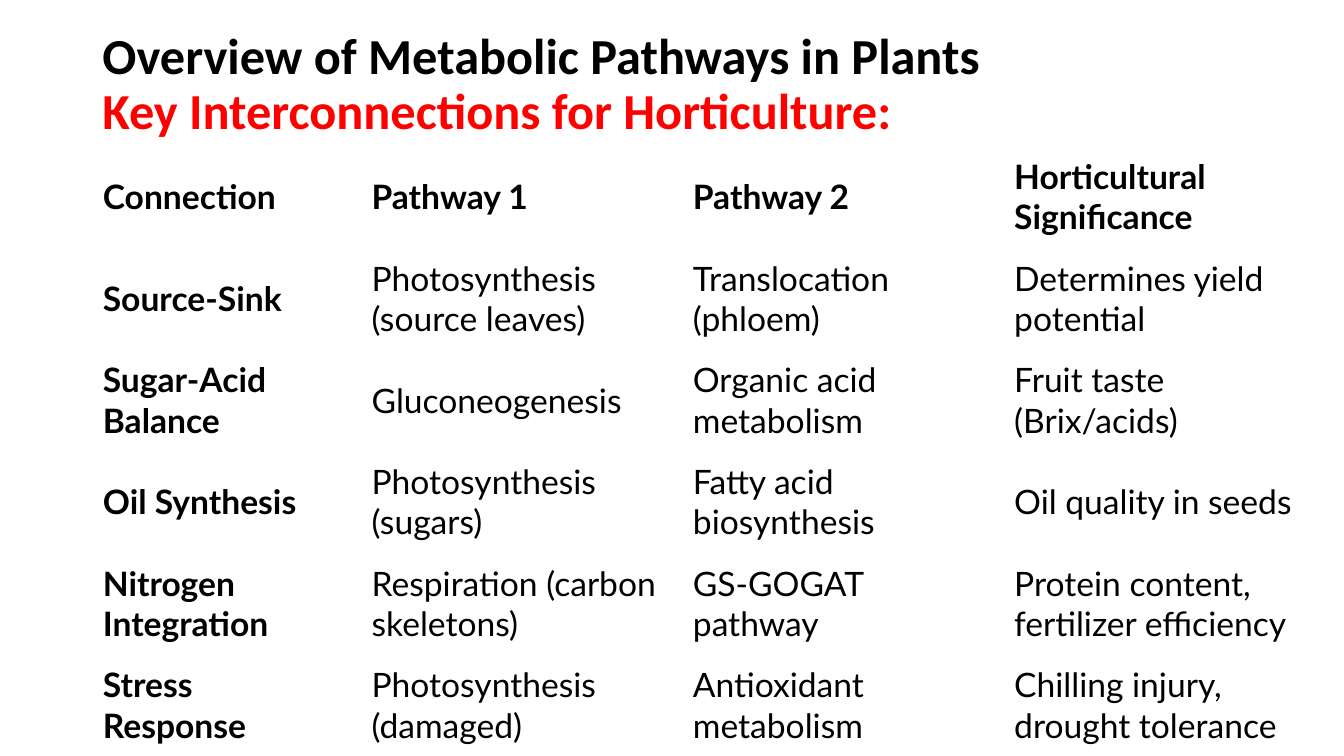
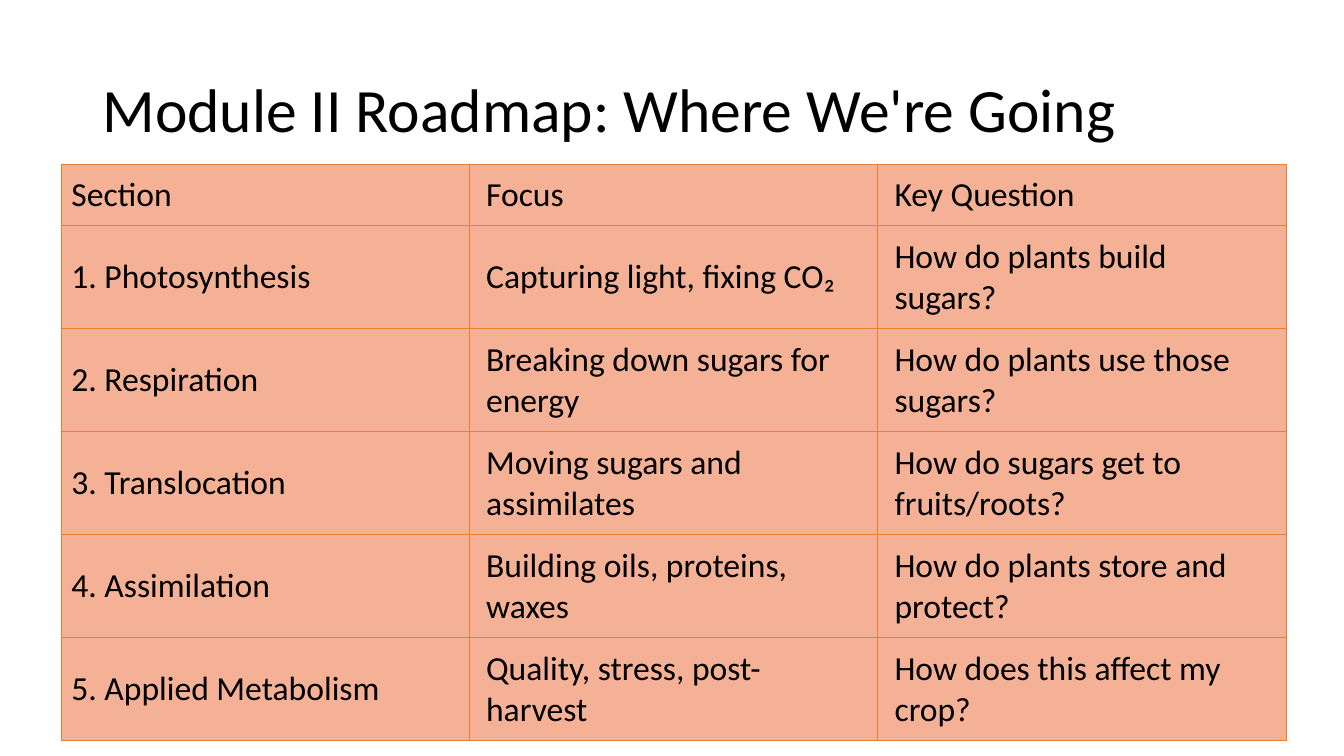
from dataclasses import dataclass
from typing import Optional

import lxml.etree
import pptx
import pptx.dml.color
import pptx.enum.text
import pptx.oxml.ns
import pptx.util

PX = 9525  # EMU per px, 96 px to the inch
TITLE_ONLY_LAYOUT = 5


@dataclass(frozen=True)
class Theme:
    title_font: str = "Calibri"
    ink: str = "000000"
    accent: str = "FF0000"
    paper: str = "FFFFFF"
    roadmap_fill: str = "F4B195"
    roadmap_border: str = "ED7D31"
    small_title: int = 36
    large_title: int = 44
    table_size: int = 24
    border_width: float = 0.5
    narrow_inset: int = 10
    wide_inset: int = 16


THEME = Theme()


@dataclass(frozen=True)
class TitleLine:
    text: str
    color: str = THEME.ink


@dataclass(frozen=True)
class TitleSpec:
    lines: tuple[TitleLine, ...]
    top: int
    size: int
    bold: bool = False


@dataclass(frozen=True)
class TableSpec:
    left: int
    top: int
    columns: tuple[int, ...]
    row_heights: tuple[int, ...]
    rows: tuple[tuple[str, ...], ...]
    font: str
    fill: str
    border: Optional[str] = None
    bold_headings: bool = False


@dataclass(frozen=True)
class SlideSpec:
    title: TitleSpec
    table: TableSpec


def px(length: int) -> pptx.util.Emu:
    return pptx.util.Emu(length * PX)


def rgb(color: str) -> pptx.dml.color.RGBColor:
    return pptx.dml.color.RGBColor.from_string(color)


# Title placeholder
def draw_title(slide, spec: TitleSpec) -> None:
    title = slide.shapes.title
    title.left, title.top, title.width, title.height = map(px, (88, spec.top, 1104, 139))
    frame = title.text_frame
    frame.word_wrap = True
    frame.auto_size = pptx.enum.text.MSO_AUTO_SIZE.NONE
    frame.vertical_anchor = pptx.enum.text.MSO_ANCHOR.MIDDLE
    paragraph = frame.paragraphs[0]
    paragraph.alignment = pptx.enum.text.PP_ALIGN.LEFT
    paragraph.line_spacing = 0.9
    paragraph.font.name = THEME.title_font
    paragraph.font.size = pptx.util.Pt(spec.size)
    paragraph.font.bold = spec.bold
    for index, line in enumerate(spec.lines):
        if index:
            paragraph.add_line_break()
        run = paragraph.add_run()
        run.text = line.text
        run.font.color.rgb = rgb(line.color)


# Table cells
def draw_borders(cell, color: str) -> None:
    properties = cell._tc.get_or_add_tcPr()
    qn = pptx.oxml.ns.qn
    for position, side in enumerate(("lnL", "lnR", "lnT", "lnB")):
        line = lxml.etree.Element(qn(f"a:{side}"), w=str(pptx.util.Pt(THEME.border_width)))
        fill = lxml.etree.SubElement(line, qn("a:solidFill"))
        lxml.etree.SubElement(fill, qn("a:srgbClr"), val=color)
        properties.insert(position, line)


def fill_cell(cell, text: str, spec: TableSpec, row: int, column: int) -> None:
    is_last = column == len(spec.columns) - 1
    narrow, wide = px(THEME.narrow_inset), px(THEME.wide_inset)
    cell.margin_left = wide if column else narrow
    cell.margin_right = narrow if is_last and row else wide
    cell.margin_top = cell.margin_bottom = narrow
    cell.vertical_anchor = pptx.enum.text.MSO_ANCHOR.MIDDLE
    cell.fill.solid()
    cell.fill.fore_color.rgb = rgb(spec.fill)
    if spec.border:
        draw_borders(cell, spec.border)
    cell.text = text
    font = cell.text_frame.paragraphs[0].font
    font.name = spec.font
    font.size = pptx.util.Pt(THEME.table_size)
    font.bold = spec.bold_headings and (row == 0 or column == 0)
    font.color.rgb = rgb(THEME.ink)


def draw_table(slide, spec: TableSpec) -> None:
    table = slide.shapes.add_table(
        len(spec.rows), len(spec.columns), px(spec.left), px(spec.top),
        px(sum(spec.columns)), px(sum(spec.row_heights)),
    ).table
    table.first_row = table.horz_banding = False
    for column, width in zip(table.columns, spec.columns):
        column.width = px(width)
    for row, height in zip(table.rows, spec.row_heights):
        row.height = px(height)
    for row, texts in enumerate(spec.rows):
        for column, text in enumerate(texts):
            fill_cell(table.cell(row, column), text, spec, row, column)


# Content
INTERCONNECTIONS = SlideSpec(
    TitleSpec(
        (TitleLine("Overview of Metabolic Pathways in Plants"),
         TitleLine("Key Interconnections for Horticulture:", THEME.accent)),
        top=12, size=THEME.small_title, bold=True,
    ),
    TableSpec(
        left=88, top=139, columns=(250,) + (306,) * 3, row_heights=(96,) * 6,
        font="Lato", fill=THEME.paper, bold_headings=True,
        rows=(
            ("Connection", "Pathway 1", "Pathway 2", "Horticultural Significance"),
            ("Source-Sink", "Photosynthesis (source leaves)", "Translocation (phloem)",
             "Determines yield potential"),
            ("Sugar-Acid Balance", "Gluconeogenesis", "Organic acid metabolism",
             "Fruit taste (Brix/acids)"),
            ("Oil Synthesis", "Photosynthesis (sugars)", "Fatty acid biosynthesis",
             "Oil quality in seeds"),
            ("Nitrogen Integration", "Respiration (carbon skeletons)", "GS-GOGAT pathway",
             "Protein content, fertilizer efficiency"),
            ("Stress Response", "Photosynthesis (damaged)", "Antioxidant metabolism",
             "Chilling injury, drought tolerance"),
        ),
    ),
)

ROADMAP = SlideSpec(
    TitleSpec((TitleLine("Module II Roadmap: Where We're Going"),),
              top=38, size=THEME.large_title),
    TableSpec(
        left=58, top=156, columns=(389,) * 3, row_heights=(59,) + (98,) * 5,
        font="Calibri", fill=THEME.roadmap_fill, border=THEME.roadmap_border,
        rows=(
            ("Section", "Focus", "Key Question"),
            ("1. Photosynthesis", "Capturing light, fixing CO₂", "How do plants build sugars?"),
            ("2. Respiration", "Breaking down sugars for energy",
             "How do plants use those sugars?"),
            ("3. Translocation", "Moving sugars and assimilates",
             "How do sugars get to fruits/roots?"),
            ("4. Assimilation", "Building oils, proteins, waxes",
             "How do plants store and protect?"),
            ("5. Applied Metabolism", "Quality, stress, post-harvest",
             "How does this affect my crop?"),
        ),
    ),
)


def main() -> None:
    deck = pptx.Presentation()
    deck.slide_width, deck.slide_height = px(1280), px(720)
    for spec in (INTERCONNECTIONS, ROADMAP):
        slide = deck.slides.add_slide(deck.slide_layouts[TITLE_ONLY_LAYOUT])
        draw_title(slide, spec.title)
        draw_table(slide, spec.table)
    deck.save("out.pptx")


if __name__ == "__main__":
    main()
